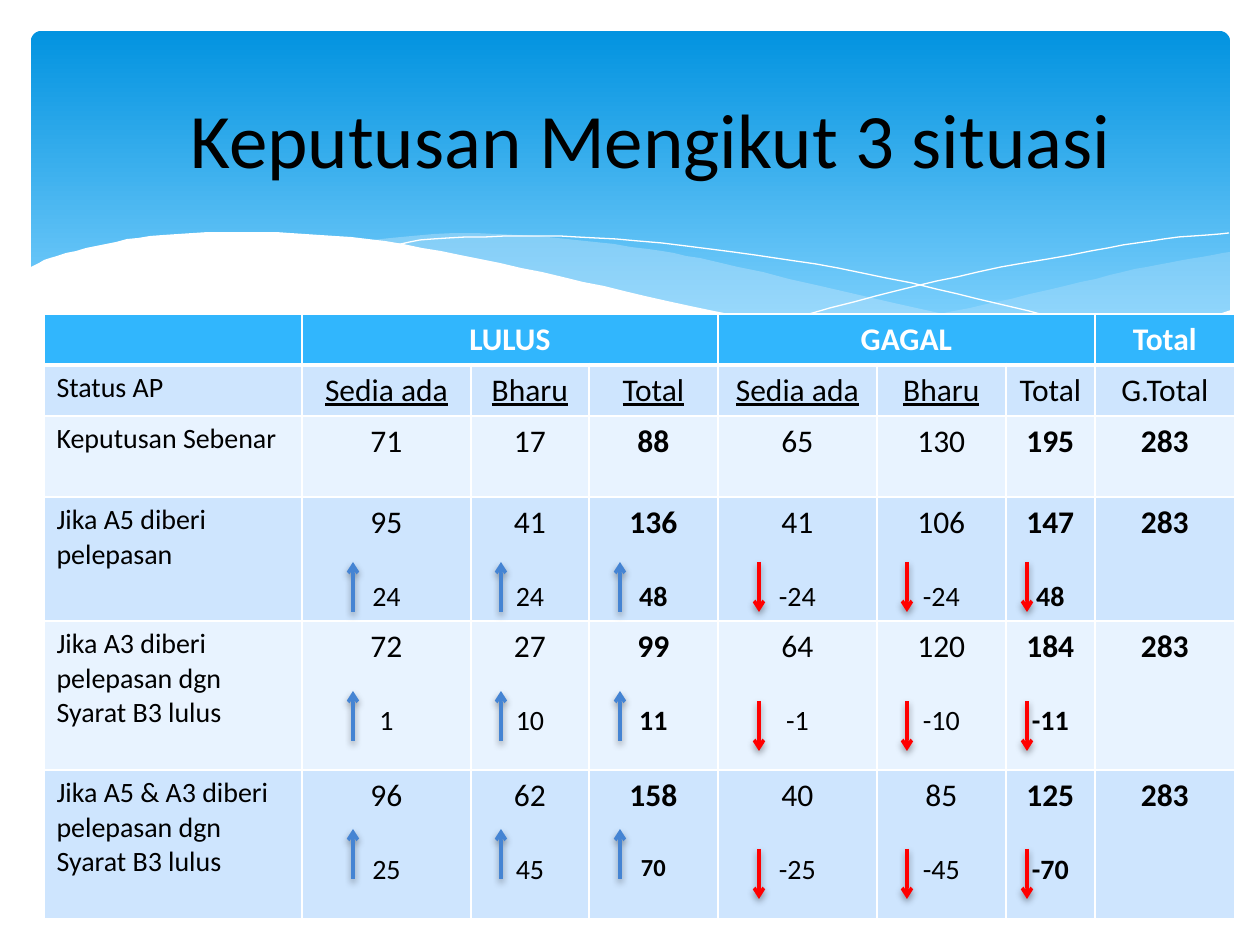
"""Build a slide comparing pass and fail results under three situations."""
from dataclasses import dataclass
from itertools import product

from lxml import etree
from pptx import Presentation
from pptx.dml.color import RGBColor
from pptx.enum.shapes import MSO_CONNECTOR, MSO_SHAPE
from pptx.enum.text import MSO_ANCHOR, PP_ALIGN
from pptx.oxml.ns import qn
from pptx.util import Pt

LEFT, CENTER = PP_ALIGN.LEFT, PP_ALIGN.CENTER
MIDDLE = MSO_ANCHOR.MIDDLE
STRAIGHT = MSO_CONNECTOR.STRAIGHT
ROUNDED = MSO_SHAPE.ROUNDED_RECTANGLE
EMU_PER_PX = 914400 / 126

Point = tuple[int, int]


@dataclass(frozen=True)
class Theme:
    font: str = "Calibri"
    title_size: int = 44
    value_size: int = 18
    label_size: int = 16
    small_size: int = 14
    change_gap: int = 22
    white: str = "FFFFFF"
    black: str = "000000"
    banner_top: str = "0293E0"
    banner_bottom: str = "83D3FE"
    wave: str = "C6E7FC"
    header: str = "31B6FD"
    dark_band: str = "CEE5FE"
    light_band: str = "E8F3FF"
    rise: str = "4584D3"
    fall: str = "FF0000"


@dataclass(frozen=True)
class Wave:
    edges: tuple[tuple[Point, ...], ...]
    fill: str | None = None
    alpha: int = 100


@dataclass(frozen=True)
class Situation:
    label: str
    values: tuple[str, ...]
    changes: tuple[str, ...] = ()


@dataclass(frozen=True)
class ArrowGroup:
    columns: tuple[int, ...]
    tops: tuple[int, ...]
    color: str
    rising: bool


THEME = Theme()
ARROW_LENGTH = 50
COLUMN_WIDTHS = (258, 169, 118, 129, 159, 129, 89, 140)
ROW_HEIGHTS = (51, 51, 81, 124, 149, 149)
TOTAL_COLUMNS = (3, 6, 7)
HEADINGS = {1: "LULUS", 4: "GAGAL", 7: "Total"}
SUBHEADINGS = ("Status AP", "Sedia ada", "Bharu", "Total", "Sedia ada", "Bharu", "Total", "G.Total")
SITUATIONS = (
    Situation("Keputusan Sebenar", ("71", "17", "88", "65", "130", "195", "283")),
    Situation("Jika A5 diberi pelepasan", ("95", "41", "136", "41", "106", "147", "283"),
              ("24", "24", "48", "-24", "-24", "48")),
    Situation("Jika A3 diberi pelepasan dgn Syarat B3 lulus",
              ("72", "27", "99", "64", "120", "184", "283"),
              ("1", "10", "11", "-1", "-10", "-11")),
    Situation("Jika A5 & A3 diberi pelepasan dgn Syarat B3 lulus",
              ("96", "62", "158", "40", "85", "125", "283"),
              ("25", "45", "70", "-25", "-45", "-70")),
)
ARROWS = (
    ArrowGroup((353, 501, 620), (562, 691, 829), THEME.rise, True),
    ArrowGroup((759, 907, 1027), (562, 701, 849), THEME.fall, False),
)
WAVES = (
    Wave((((1230, 252), (1178, 261), (1123, 272), (1048, 290), (949, 312), (833, 334)),
          ((833, 334), (922, 345), (1012, 350), (1087, 346), (1160, 334), (1230, 311))),
         THEME.wave, 29),
    Wave((((1125, 344), (976, 320), (842, 291), (717, 262), (648, 249), (557, 238),
           (455, 233), (360, 241)),
          ((360, 241), (431, 251), (509, 266), (566, 280), (668, 302), (779, 325),
           (893, 343), (989, 350), (1068, 349), (1125, 344))), THEME.wave, 40),
    Wave((((389, 246), (433, 239), (524, 236), (616, 239), (733, 252), (838, 268),
           (958, 294), (1047, 316), (1143, 343)),)),
    Wave((((772, 324), (876, 296), (978, 272), (1091, 251), (1164, 239), (1229, 233)),)),
    Wave((((1231, 310), (1184, 326), (1118, 341), (1019, 349), (915, 343), (789, 325),
           (667, 301), (563, 277), (460, 255), (368, 239), (290, 233), (223, 232),
           (150, 236), (96, 246), (50, 258), (29, 268)),
          ((29, 415), (1231, 415))), THEME.white),
)


def px(length: int) -> int:
    return round(length * EMU_PER_PX)


def rgb(color: str) -> RGBColor:
    return RGBColor.from_string(color)


def add_element(parent, tag: str, **attributes):
    return etree.SubElement(parent, qn(tag), {key: str(value) for key, value in attributes.items()})


def write(paragraph, text: str, *, size=THEME.value_size, color=THEME.black, bold=False,
          underline=False, align=CENTER, gap=0) -> None:
    paragraph.alignment = align
    paragraph.space_before = Pt(gap)
    span = paragraph.add_run()
    span.text = text
    font = span.font
    font.name, font.size, font.bold, font.underline = THEME.font, Pt(size), bold, underline
    font.color.rgb = rgb(color)


def smooth(points: tuple[Point, ...], steps: int = 5) -> list[tuple[float, float]]:
    padded = (points[0], *points, points[-1])
    curve = []
    for index, step in product(range(len(points) - 1), range(steps)):
        t = step / steps
        curve.append(tuple(
            b + t * (c - a) / 2 + t * t * (2 * a - 5 * b + 4 * c - d) / 2
            + t ** 3 * (3 * b - a - 3 * c + d) / 2
            for a, b, c, d in zip(*padded[index:index + 4])))
    return [*curve, points[-1]]


def draw_wave(page, wave: Wave) -> None:
    start, *rest = [point for edge in wave.edges for point in smooth(edge)]
    builder = page.shapes.build_freeform(*start, scale=EMU_PER_PX)
    builder.add_line_segments(rest, close=wave.fill is not None)
    shape = builder.convert_to_shape()
    shape.shadow.inherit = False
    if wave.fill is None:
        shape.fill.background()
        shape.line.color.rgb = rgb(THEME.white)
        shape.line.width = 0
        return
    shape.line.fill.background()
    shape.fill.solid()
    shape.fill.fore_color.rgb = rgb(wave.fill)
    color = shape.fill._xPr.find(qn("a:solidFill"))[0]
    add_element(color, "a:alpha", val=wave.alpha * 1000)


def draw_banner(page) -> None:
    banner = page.shapes.add_shape(ROUNDED, px(31), px(31), px(1199), px(340))
    banner.adjustments[0] = 0.03
    banner.shadow.inherit = False
    banner.line.fill.background()
    banner.fill.gradient()
    banner.fill.gradient_angle = 270
    colors = (THEME.banner_top, THEME.banner_bottom)
    for stop, position, color in zip(banner.fill.gradient_stops, (0, 0.9), colors):
        stop.position, stop.color.rgb = position, rgb(color)


def draw_title(page, text: str) -> None:
    box = page.shapes.add_textbox(px(84), px(59), px(1134), px(158))
    box.text_frame.word_wrap = True
    box.text_frame.vertical_anchor = MIDDLE
    write(box.text_frame.paragraphs[0], text, size=THEME.title_size)


def style_cell(cell, row: int) -> None:
    properties = cell._tc.get_or_add_tcPr()
    for side in "LRTB":
        thick = (row, side) in ((0, "B"), (1, "T"))
        border = add_element(properties, f"a:ln{side}", w=Pt(3 if thick else 1))
        add_element(add_element(border, "a:solidFill"), "a:srgbClr", val=THEME.white)
    cell.fill.solid()
    band = THEME.dark_band if row % 2 else THEME.light_band
    cell.fill.fore_color.rgb = rgb(band if row else THEME.header)


def draw_table(page) -> None:
    table = page.shapes.add_table(len(ROW_HEIGHTS), len(COLUMN_WIDTHS), px(44), px(314),
                                  px(sum(COLUMN_WIDTHS)), px(sum(ROW_HEIGHTS))).table
    table.first_row = table.horz_banding = False
    for column, width in zip(table.columns, COLUMN_WIDTHS):
        column.width = px(width)
    for row, height in zip(table.rows, ROW_HEIGHTS):
        row.height = px(height)
    for row, column in product(range(len(ROW_HEIGHTS)), range(len(COLUMN_WIDTHS))):
        style_cell(table.cell(row, column), row)
    for column in (1, 4):
        table.cell(0, column).merge(table.cell(0, column + 2))
    for column, text in HEADINGS.items():
        write(table.cell(0, column).text_frame.paragraphs[0], text, color=THEME.white, bold=True)
    label_format = {"size": THEME.label_size, "align": LEFT}
    for column, text in enumerate(SUBHEADINGS):
        layout = {"underline": column < 6} if column else label_format
        write(table.cell(1, column).text_frame.paragraphs[0], text, **layout)
    for row, situation in enumerate(SITUATIONS, 2):
        write(table.cell(row, 0).text_frame.paragraphs[0], situation.label, **label_format)
        for column, text in enumerate(situation.values, 1):
            write(table.cell(row, column).text_frame.paragraphs[0], text,
                  bold=column in TOTAL_COLUMNS)
        for column, text in enumerate(situation.changes, 1):
            size = THEME.small_size if text == "70" else THEME.label_size
            write(table.cell(row, column).text_frame.add_paragraph(), text, size=size,
                  bold=column in TOTAL_COLUMNS, gap=THEME.change_gap)


def draw_arrow(page, x: int, top: int, group: ArrowGroup) -> None:
    start, end = (top + ARROW_LENGTH, top) if group.rising else (top, top + ARROW_LENGTH)
    arrow = page.shapes.add_connector(STRAIGHT, px(x), px(start), px(x), px(end))
    arrow.line.color.rgb = rgb(group.color)
    arrow.line.width = Pt(2)
    properties = arrow._element.spPr
    add_element(properties.find(qn("a:ln")), "a:tailEnd", type="arrow")
    shadow = add_element(add_element(properties, "a:effectLst"), "a:outerShdw",
                         blurRad=Pt(4), dist=Pt(2), dir=5400000, rotWithShape=0)
    add_element(add_element(shadow, "a:srgbClr", val=THEME.black), "a:alpha", val=38000)


def main() -> None:
    deck = Presentation()
    deck.slide_width, deck.slide_height = px(1260), px(945)
    page = deck.slides.add_slide(deck.slide_layouts[6])
    draw_banner(page)
    for wave in WAVES:
        draw_wave(page, wave)
    draw_title(page, "Keputusan Mengikut 3 situasi")
    draw_table(page)
    for group in ARROWS:
        for x, top in product(group.columns, group.tops):
            draw_arrow(page, x, top, group)
    deck.save("out.pptx")


if __name__ == "__main__":
    main()
